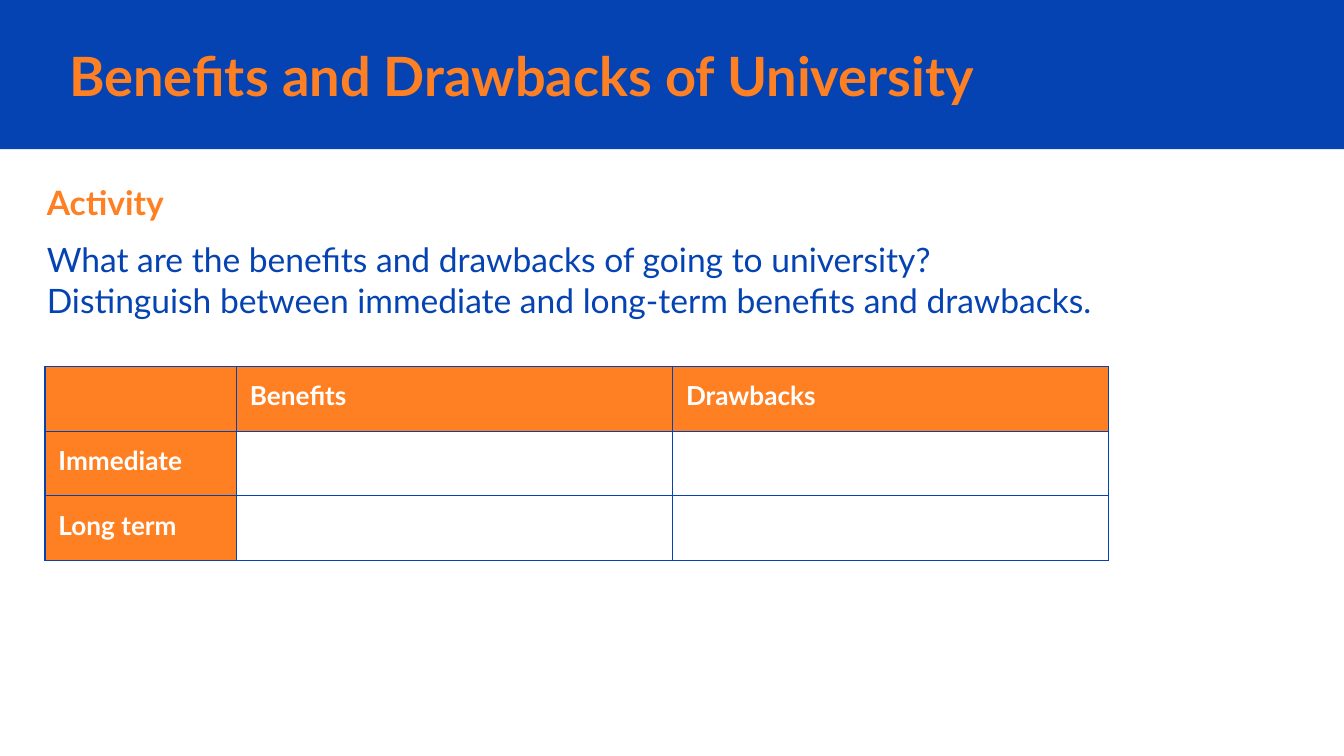
import pptx
import pptx.dml.color
import pptx.enum.shapes
import pptx.enum.text
import pptx.oxml
import pptx.oxml.ns
import pptx.util

COLORS = {"blue": "0543B3", "orange": "FF8022", "white": "FFFFFF"}
FONT = "Lato"
INSET = pptx.util.Inches(0.1)
WIDTH = pptx.util.Inches(10)
HEIGHT = WIDTH * 9 // 16


def color(name):
    return pptx.dml.color.RGBColor.from_string(COLORS[name])


def percent_box(outer, left, top, width, height):
    x, y, across, down = outer
    return (x + round(across * left / 100), y + round(down * top / 100),
            round(across * width / 100), round(down * height / 100))


def style(para, size, name, bold=False):
    para.alignment = pptx.enum.text.PP_ALIGN.LEFT
    para.font.name = FONT
    para.font.size = pptx.util.Pt(size)
    para.font.bold = bold
    para.font.color.rgb = color(name)


def set_insets(target):
    target.margin_left = target.margin_right = INSET
    target.margin_top = target.margin_bottom = INSET


def set_borders(cell, name, points):
    properties = cell._tc.get_or_add_tcPr()
    for index, side in enumerate(("lnL", "lnR", "lnT", "lnB")):
        line = pptx.oxml.parse_xml(
            f'<a:{side} {pptx.oxml.ns.nsdecls("a")} w="{pptx.util.Pt(points)}">'
            f'<a:solidFill><a:srgbClr val="{COLORS[name]}"/></a:solidFill></a:{side}>')
        properties.insert(index, line)


def add_header(page, box):
    band = page.shapes.add_shape(pptx.enum.shapes.MSO_SHAPE.RECTANGLE, *box)
    band.shadow.inherit = False
    band.fill.solid()
    band.fill.fore_color.rgb = color("blue")
    band.line.fill.background()

    title = page.shapes.title
    title.element.addprevious(band.element)
    title.left, title.top, title.width, title.height = percent_box(box, 4.15, 25, 84.6, 50)
    frame = title.text_frame
    frame.text = "Benefits and Drawbacks of University"
    frame.auto_size = pptx.enum.text.MSO_AUTO_SIZE.NONE
    frame.vertical_anchor = pptx.enum.text.MSO_ANCHOR.MIDDLE
    set_insets(frame)
    style(frame.paragraphs[0], 29, "orange", True)


def add_activity(page, box):
    frame = page.shapes.add_textbox(*box).text_frame
    frame.word_wrap = True
    set_insets(frame)
    lines = [
        "Activity",
        "What are the benefits and drawbacks of going to university?",
        "Distinguish between immediate and long-term benefits and drawbacks.",
    ]
    frame.text = "\n".join(lines)
    heading, question, instruction = frame.paragraphs
    style(heading, 18, "orange", True)
    for para in (question, instruction):
        style(para, 18, "blue")
    question.space_before = pptx.util.Pt(9.4)


def add_comparison(page, box):
    rows = [["", "Benefits", "Drawbacks"],
            ["Immediate", "", ""],
            ["Long term", "", ""]]
    table = page.shapes.add_table(len(rows), len(rows[0]), *box).table
    table.horz_banding = False
    for column, part in zip(table.columns, (0.18, 0.41, 0.41)):
        column.width = round(box[2] * part)
    for row_index, texts in enumerate(rows):
        for column_index, text in enumerate(texts):
            cell = table.cell(row_index, column_index)
            cell.text = text
            set_insets(cell)
            style(cell.text_frame.paragraphs[0], 14, "white", True)
            if row_index == 0 or column_index == 0:
                cell.fill.solid()
                cell.fill.fore_color.rgb = color("orange")
            else:
                cell.fill.background()
            set_borders(cell, "blue", 0.75)


def main():
    deck = pptx.Presentation()
    deck.slide_width, deck.slide_height = WIDTH, HEIGHT
    page = deck.slides.add_slide(deck.slide_layouts.get_by_name("Title Only"))
    page.background.fill.solid()
    page.background.fill.fore_color.rgb = color("white")
    whole = (0, 0, WIDTH, HEIGHT)
    add_header(page, percent_box(whole, 0, 0, 100, 19.73))
    add_activity(page, percent_box(whole, 2.5, 22.22, 95, 22.22))
    add_comparison(page, percent_box(whole, 3.35, 48.5, 79.15, 25.65))
    deck.save("out.pptx")


if __name__ == "__main__":
    main()
